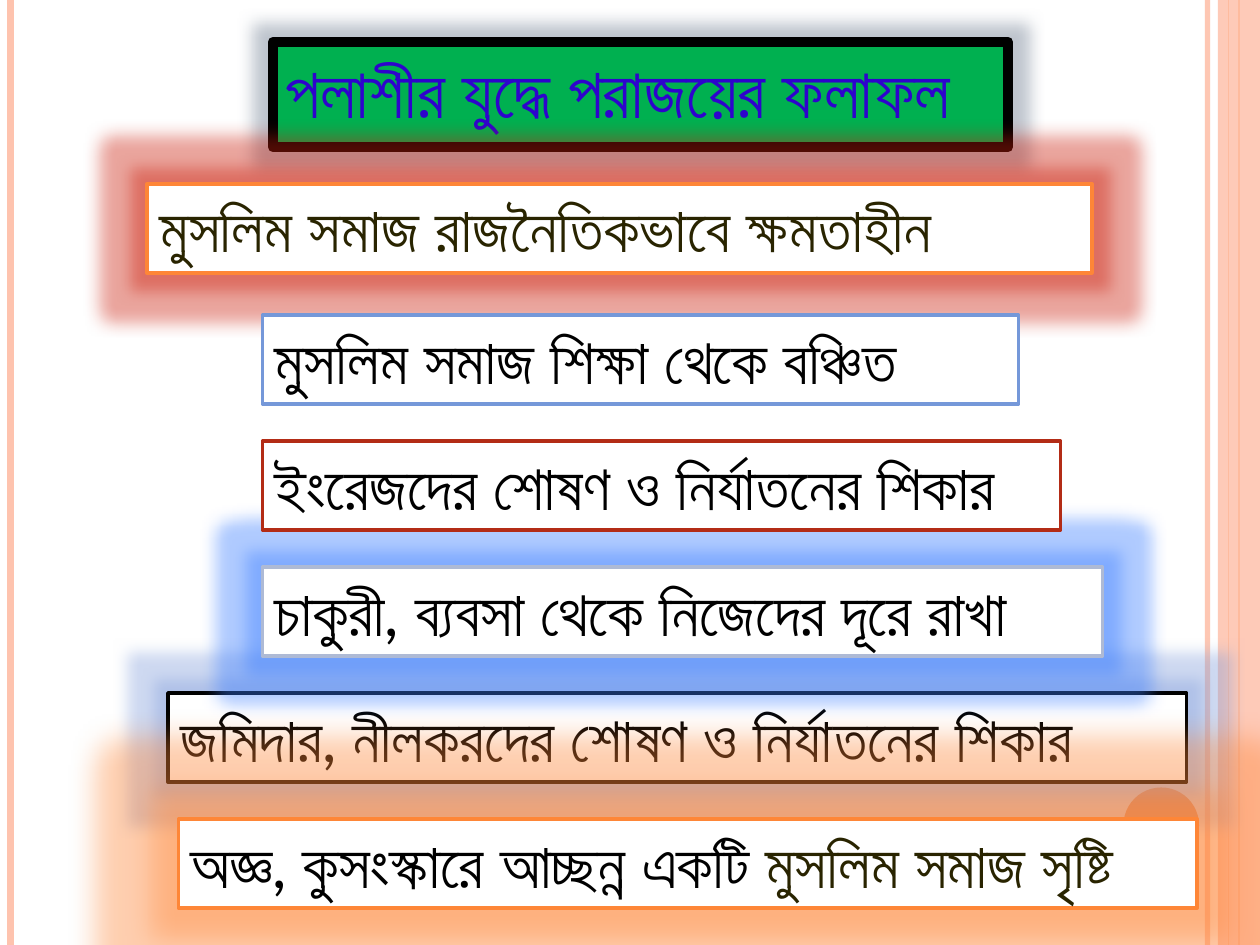
import pptx
import pptx.util
import pptx.dml.color
import pptx.enum.shapes
import pptx.enum.text
import pptx.oxml
import pptx.oxml.ns

RGBColor = pptx.dml.color.RGBColor
BLACK = RGBColor(0x00, 0x00, 0x00)
WHITE = RGBColor(0xFF, 0xFF, 0xFF)
ORANGE = RGBColor(0xFE, 0x86, 0x37)
PEACH = RGBColor(0xFE, 0xC3, 0xAE)
GREEN = RGBColor(0x00, 0xB0, 0x50)
VIOLET = RGBColor(0x2E, 0x03, 0xCD)
OLIVE = RGBColor(0x29, 0x24, 0x00)
BLUE = RGBColor(0x75, 0x98, 0xD9)
PALE_BLUE = RGBColor(0xAE, 0xBA, 0xD5)
BRICK = RGBColor(0xB3, 0x2C, 0x16)
SLATE_GLOW = RGBColor(0x5F, 0x6F, 0x85)
RED_GLOW = RGBColor(0xCB, 0x1E, 0x0C)
BLUE_GLOW = RGBColor(0x3A, 0x7D, 0xFF)
SOFT_GLOW = RGBColor(0x85, 0xA0, 0xDC)
FONT = "Lato"


def add_xml(parent, tag, **attributes):
    child = pptx.oxml.parse_xml(f"<a:{tag} {pptx.oxml.ns.nsdecls('a')}/>")
    for name, value in attributes.items():
        child.set(name, str(value))
    parent.append(child)
    return child


def style_box(box, place, fill, line, line_width, size, colors, glow):
    box.left, box.top, box.width, box.height = [int(cell * n) for n in place]
    box.fill.solid()
    box.fill.fore_color.rgb = fill
    box.line.color.rgb = line
    box.line.width = pptx.util.Pt(line_width)
    if glow:
        glow_color, radius = glow
        effects = add_xml(box._element.spPr, "effectLst")
        halo = add_xml(effects, "glow", rad=pptx.util.Pt(radius))
        add_xml(add_xml(halo, "srgbClr", val=glow_color), "alpha", val=40000)
    frame = box.text_frame
    frame.word_wrap = True
    frame.auto_size = pptx.enum.text.MSO_AUTO_SIZE.SHAPE_TO_FIT_TEXT
    frame.vertical_anchor = pptx.enum.text.MSO_ANCHOR.TOP
    paragraph = frame.paragraphs[0]
    paragraph.alignment = pptx.enum.text.PP_ALIGN.LEFT
    for run, color in zip(paragraph.runs, colors):
        run.font.size = pptx.util.Pt(size)
        run.font.name = FONT
        run.font.color.rgb = color
        add_xml(run.font._element, "cs", typeface=FONT)


deck = pptx.Presentation()
deck.slide_width = pptx.util.Inches(10)
deck.slide_height = pptx.util.Inches(7.5)
cell = deck.slide_width // 120
slide = deck.slides.add_slide(deck.slide_layouts[5])
slide.background.fill.solid()
slide.background.fill.fore_color.rgb = WHITE

edge_lines = [
    (115, PEACH, 3, 93),
    (1, PEACH, 4.5, 100),
    (118, ORANGE, 1.5, 100),
    (117, ORANGE, 0.75, 100),
]
for column, color, width, opacity in edge_lines:
    edge = slide.shapes.add_connector(
        pptx.enum.shapes.MSO_CONNECTOR.STRAIGHT,
        cell * column, 0, cell * column, deck.slide_height)
    edge.line.color.rgb = color
    edge.line.width = pptx.util.Pt(width)
    if opacity < 100:
        add_xml(edge.line.fill._xPr.solidFill.srgbClr, "alpha", val=opacity * 1000)
    add_xml(edge._element.spPr, "effectLst")

SHAPES = pptx.enum.shapes.MSO_SHAPE
ornaments = [
    (SHAPES.RECTANGLE, (116, 0, 4, 90), PEACH, 87),
    (SHAPES.OVAL, (107, 75, 7.2, 7.2), ORANGE, 100),
]
for kind, place, color, opacity in ornaments:
    ornament = slide.shapes.add_shape(kind, *[int(cell * n) for n in place])
    ornament.fill.solid()
    ornament.fill.fore_color.rgb = color
    if opacity < 100:
        add_xml(ornament.fill._xPr.solidFill.srgbClr, "alpha", val=opacity * 1000)
    ornament.line.fill.background()
    ornament.shadow.inherit = False

heading = slide.shapes.title
heading.text_frame.text = "পলাশীর যুদ্ধে পরাজয়ের ফলাফল"
style_box(heading, (26, 4, 70, 9.3), GREEN, BLACK, 6, 40, [VIOLET], (SLATE_GLOW, 18))

outcomes = [
    (16, 66, 97, BLACK, (SOFT_GLOW, 16),
     [("জমিদার, নীলকরদের শোষণ ও নির্যাতনের শিকার", BLACK)]),
    (25, 54, 80, PALE_BLUE, (BLUE_GLOW, 18),
     [("চাকুরী, ব্যবসা থেকে নিজেদের দূরে রাখা", BLACK)]),
    (14, 17.5, 90, ORANGE, (RED_GLOW, 18),
     [("মুসলিম সমাজ রাজনৈতিকভাবে ক্ষমতাহীন", OLIVE)]),
    (25, 30, 72, BLUE, None,
     [("মুসলিম সমাজ শিক্ষা থেকে বঞ্চিত", BLACK)]),
    (25, 42, 76, BRICK, None,
     [("ইংরেজদের শোষণ ও নির্যাতনের শিকার", BLACK)]),
    (17, 78, 97, ORANGE, (ORANGE, 32),
     [("অজ্ঞ, কুসংস্কারে আচ্ছন্ন একটি ", BLACK), ("মুসলিম সমাজ সৃষ্টি", OLIVE)]),
]
for column, row, span, line, glow, pieces in outcomes:
    outcome = slide.shapes.add_textbox(0, 0, cell, cell)
    for text, color in pieces:
        outcome.text_frame.paragraphs[0].add_run().text = text
    style_box(outcome, (column, row, span, 8.5), WHITE, line, 2, 36,
              [color for text, color in pieces], glow)

deck.save("out.pptx")
